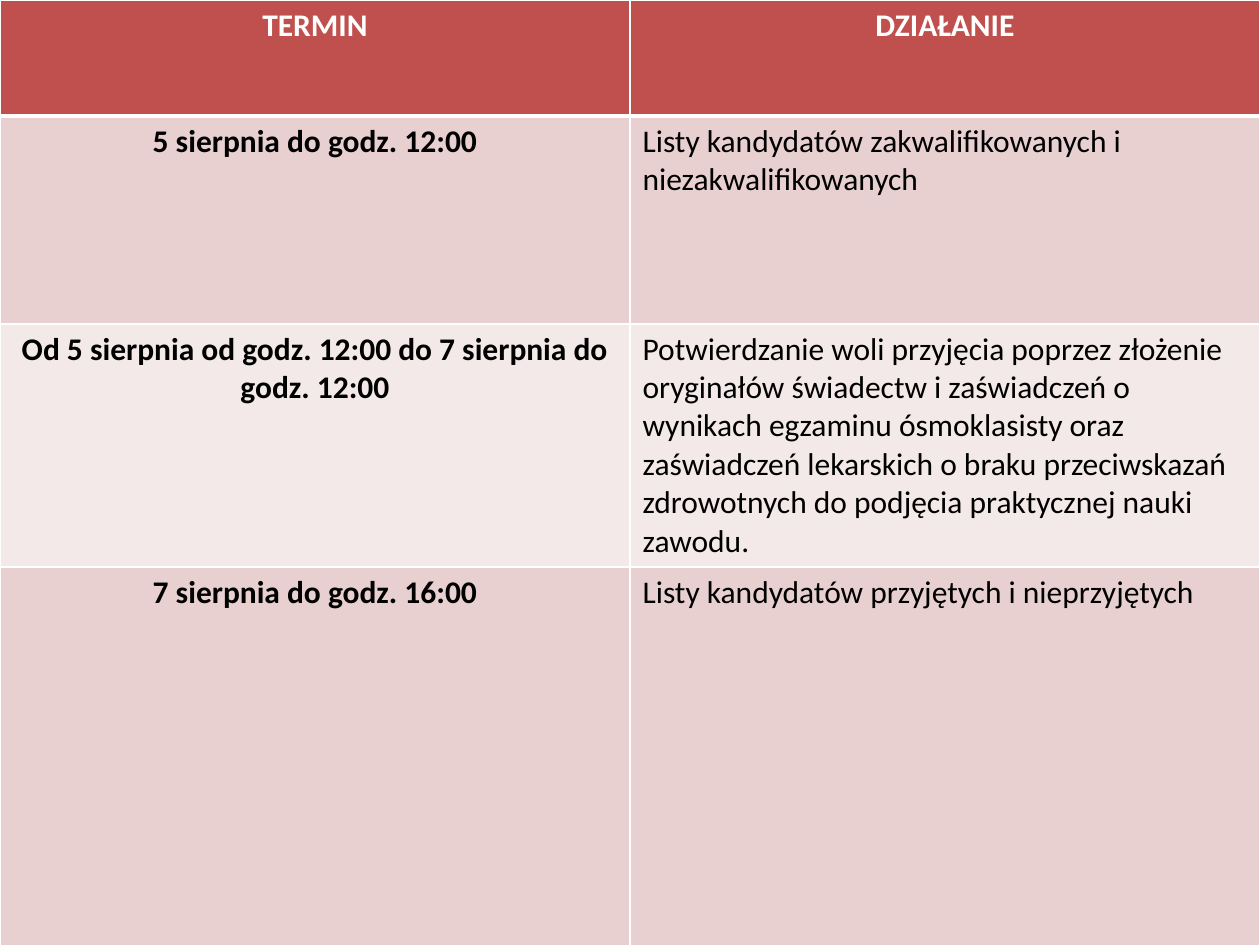
from lxml.etree import SubElement
from pptx import Presentation
from pptx.dml.color import RGBColor
from pptx.enum.text import PP_ALIGN as Align
from pptx.oxml.ns import qn
from pptx.util import Inches, Pt

COLORS = {
    "header": "C0504D",
    "odd_row": "E8D0D0",
    "even_row": "F4E9E9",
    "border": "FFFFFF",
    "header_text": "FFFFFF",
    "body_text": "000000",
}
COLUMN_WIDTHS = [5, 5]
ROW_HEIGHTS = [0.92, 1.65, 1.89, 3.05]
THIN, THICK = 1, 3

SCHEDULE = [
    ("TERMIN", "DZIAŁANIE"),
    ("5 sierpnia do godz. 12:00",
     "Listy kandydatów zakwalifikowanych i niezakwalifikowanych"),
    ("Od 5 sierpnia od godz. 12:00 do 7 sierpnia do godz. 12:00",
     "Potwierdzanie woli przyjęcia poprzez złożenie oryginałów świadectw "
     "i zaświadczeń o wynikach egzaminu ósmoklasisty oraz zaświadczeń "
     "lekarskich o braku przeciwskazań zdrowotnych do podjęcia praktycznej "
     "nauki zawodu."),
    ("7 sierpnia do godz. 16:00",
     "Listy kandydatów przyjętych i nieprzyjętych"),
]


def set_borders(cell, top, bottom):
    """Draw the four cell borders; the side ones are always thin."""
    properties = cell._tc.get_or_add_tcPr()
    widths = {"a:lnL": THIN, "a:lnR": THIN, "a:lnT": top, "a:lnB": bottom}
    for tag, width in widths.items():
        line = SubElement(properties, qn(tag), w=str(Pt(width)))
        fill = SubElement(line, qn("a:solidFill"))
        SubElement(fill, qn("a:srgbClr"), val=COLORS["border"])


def set_fill(cell, color):
    cell.fill.solid()
    cell.fill.fore_color.rgb = RGBColor.from_string(COLORS[color])


def write_text(cell, text, color, bold, centred):
    paragraph = cell.text_frame.paragraphs[0]
    paragraph.alignment = Align.CENTER if centred else Align.LEFT
    run = paragraph.add_run()
    run.text = text
    run.font.name = "Calibri"
    run.font.size = Pt(18)
    run.font.bold = bold
    run.font.color.rgb = RGBColor.from_string(COLORS[color])


def add_schedule(slide):
    frame = slide.shapes.add_table(
        len(SCHEDULE), len(COLUMN_WIDTHS), 0, 0,
        Inches(sum(COLUMN_WIDTHS)), Inches(sum(ROW_HEIGHTS)))
    table = frame.table
    for column, width in zip(table.columns, COLUMN_WIDTHS):
        column.width = Inches(width)
    for row, height in zip(table.rows, ROW_HEIGHTS):
        row.height = Inches(height)

    for row_index, texts in enumerate(SCHEDULE):
        is_header = row_index == 0
        row_fill = "odd_row" if row_index % 2 else "even_row"
        for column_index, text in enumerate(texts):
            cell = table.cell(row_index, column_index)
            # Thick rule between the header and the first date
            set_borders(cell, top=THICK if row_index == 1 else THIN,
                        bottom=THICK if is_header else THIN)
            set_fill(cell, "header" if is_header else row_fill)
            # Header and dates are bold and centred, actions are plain
            emphasised = is_header or column_index == 0
            write_text(cell, text,
                       "header_text" if is_header else "body_text",
                       bold=emphasised, centred=emphasised)


def main():
    presentation = Presentation()
    presentation.slide_width = Inches(10)
    presentation.slide_height = Inches(7.5)
    # Blank layout: the slide holds only the table
    slide = presentation.slides.add_slide(presentation.slide_layouts[6])
    add_schedule(slide)
    presentation.save("out.pptx")


if __name__ == "__main__":
    main()
